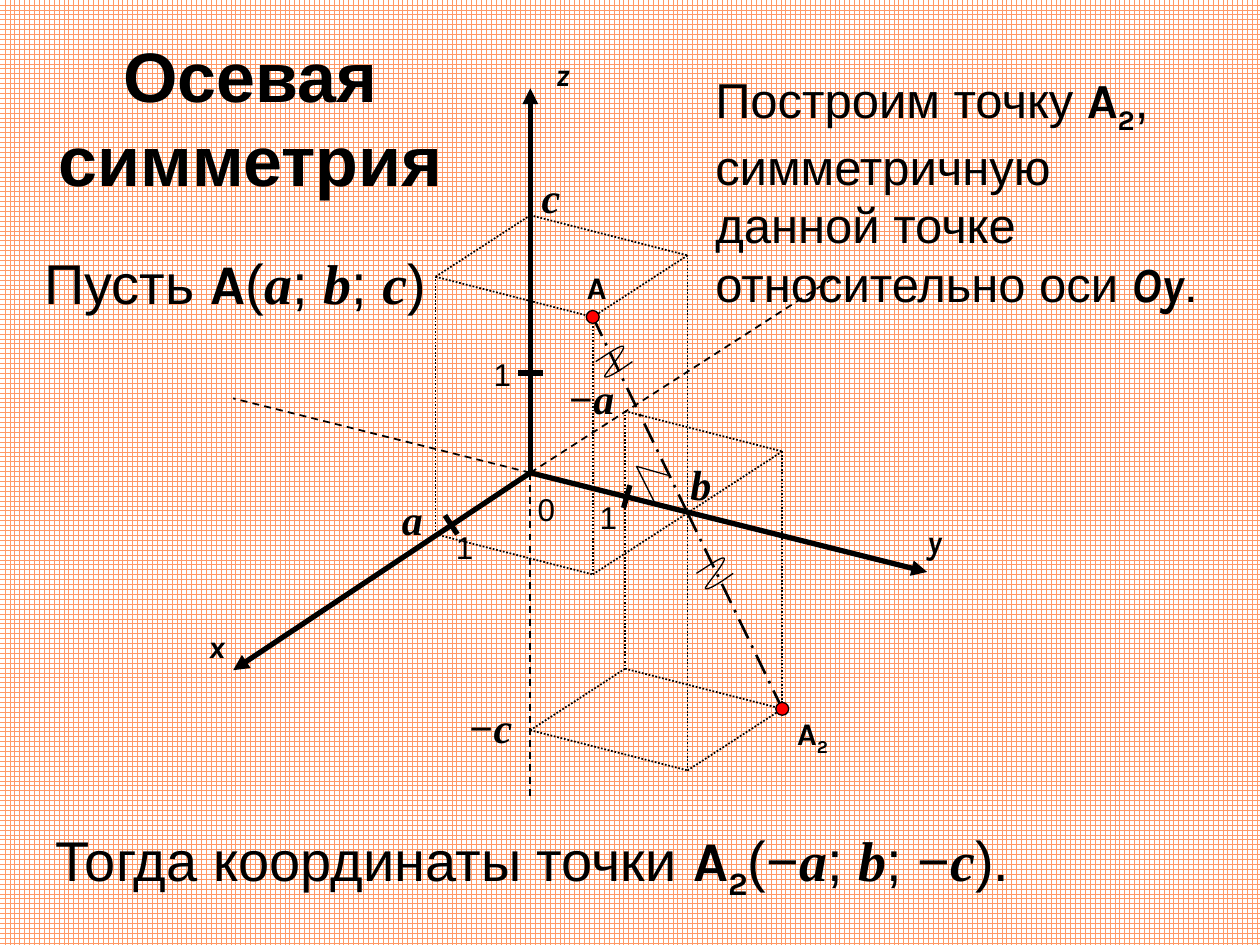
from collections import namedtuple
from itertools import combinations

from lxml.etree import SubElement
from pptx import Presentation
from pptx.dml.color import RGBColor
from pptx.enum.dml import MSO_LINE, MSO_PATTERN
from pptx.enum.shapes import MSO_CONNECTOR, MSO_SHAPE
from pptx.enum.text import PP_ALIGN
from pptx.oxml.ns import qn
from pptx.util import Cm, Pt

BLACK = RGBColor(0x00, 0x00, 0x00)
WHITE = RGBColor(0xFF, 0xFF, 0xFF)
RED = RGBColor(0xFF, 0x00, 0x00)
GRID_ORANGE = RGBColor(0xFF, 0x99, 0x66)

Style = namedtuple("Style", "font bold italic baseline")
PLAIN = Style("Arial", False, False, 0)
TITLE = Style("Arial", True, False, 0)
POINT = Style("Karla", True, False, 0)
INDEX = Style("Karla", True, False, -25000)
AXIS = Style("Karla", True, True, 0)
COORDINATE = Style("Times New Roman", True, True, 0)

# Projection of the space axes, in centimetres
ORIGIN = (10.69, 9.53)
UNIT_A = (-1.91, 1.24)
UNIT_B = (3.17, 0.81)
UNIT_C = (0, -5.19)


def project(a, b, c):
    return tuple(o + a * ua + b * ub + c * uc
                 for o, ua, ub, uc in zip(ORIGIN, UNIT_A, UNIT_B, UNIT_C))


def add_line(slide, start, end, width, dash=None, arrow=False):
    line = slide.shapes.add_connector(
        MSO_CONNECTOR.STRAIGHT, *(Cm(value) for value in (*start, *end)))
    line.line.color.rgb = BLACK
    line.line.width = Pt(width)
    if dash is not None:
        line.line.dash_style = dash
    if arrow:
        SubElement(line.line._get_or_add_ln(), qn("a:tailEnd"), type="triangle")
    SubElement(line._element.spPr, qn("a:effectLst"))


def set_font(font, style, size):
    font.name = style.font
    font.size = Pt(size)
    font.bold = style.bold
    font.italic = style.italic
    font.color.rgb = BLACK


def add_text(slide, box, size, *pieces, align=PP_ALIGN.LEFT):
    """Each piece is a (text, style) pair."""
    text_box = slide.shapes.add_textbox(*(Cm(value) for value in box))
    text_box.text_frame.word_wrap = True
    paragraph = text_box.text_frame.paragraphs[0]
    paragraph.alignment = align
    for text, style in pieces:
        run = paragraph.add_run()
        run.text = text
        if len(pieces) == 1:
            set_font(paragraph.font, style, size)
            continue
        set_font(run.font, style, size)
        if style.baseline:
            run._r.get_or_add_rPr().set("baseline", str(style.baseline))


def add_point(slide, centre):
    diameter = 0.26
    left, top = (value - diameter / 2 for value in centre)
    shape = slide.shapes.add_shape(
        MSO_SHAPE.OVAL, Cm(left), Cm(top), Cm(diameter), Cm(diameter))
    shape.shadow.inherit = False
    shape.fill.solid()
    shape.fill.fore_color.rgb = RED
    shape.line.color.rgb = BLACK
    shape.line.width = Pt(0.75)


def add_box_edges(slide, signs):
    """Dotted edges of the coordinate box, without those on the axes."""
    corners = [(a, b, c) for a in (0, signs[0])
               for b in (0, signs[1]) for c in (0, signs[2])]
    for first, second in combinations(corners, 2):
        is_edge = sum(p != q for p, q in zip(first, second)) == 1
        if is_edge and any(first):
            add_line(slide, project(*first), project(*second), 1,
                     MSO_LINE.ROUND_DOT)


def bezier(controls, steps=12):
    for step in range(1, steps + 1):
        t = step / steps
        weights = ((1 - t) ** 3, 3 * t * (1 - t) ** 2, 3 * t * t * (1 - t), t ** 3)
        yield tuple(sum(weight * control[axis]
                        for weight, control in zip(weights, controls))
                    for axis in (0, 1))


def add_equal_mark(slide, offset):
    controls = [(x + offset[0], y + offset[1]) for x, y in (
        (12.75, 7.29), (12.5, 7.47), (12.22, 7.65), (12.19, 7.59),
        (12.17, 7.57), (12.62, 7.04), (12.57, 6.99),
        (12.55, 6.93), (12.29, 7.11), (12.01, 7.29))]
    points = [point for start in (0, 3, 6)
              for point in bezier(controls[start:start + 4])]
    builder = slide.shapes.build_freeform(*(Cm(value) for value in controls[0]))
    builder.add_line_segments([(Cm(x), Cm(y)) for x, y in points], close=False)
    mark = builder.convert_to_shape()
    mark.shadow.inherit = False
    mark.fill.background()
    mark.line.color.rgb = BLACK
    mark.line.width = Pt(0.75)


def main():
    presentation = Presentation()
    presentation.slide_width = Cm(25.4)
    presentation.slide_height = Cm(19.05)
    slide = presentation.slides.add_slide(presentation.slide_layouts[6])

    # Squared paper
    background = slide.background.fill
    background.patterned()
    background.pattern = MSO_PATTERN.LARGE_GRID
    background.fore_color.rgb = GRID_ORANGE
    background.back_color.rgb = WHITE

    # Axes: positive and negative halves
    for positive, negative in (((4.7, 13.51), (16.79, 5.61)),
                               ((18.69, 11.53), (4.7, 8.03)),
                               ((10.69, 1.78), (10.69, 16.08))):
        add_line(slide, ORIGIN, negative, 1, MSO_LINE.DASH)
        add_line(slide, ORIGIN, positive, 3, arrow=True)

    # Unit ticks
    for start, end in (((10.44, 7.52), (10.95, 7.52)),
                       ((12.57, 10.24), (12.7, 9.78)),
                       ((8.97, 10.39), (9.22, 10.77))):
        add_line(slide, start, end, 3)

    # Coordinate boxes and the segment joining the symmetric points
    point_a, point_a2 = project(1, 1, 1), project(-1, 1, -1)
    foot = project(0, 1, 0)
    for signs in ((1, 1, 1), (-1, 1, -1)):
        add_box_edges(slide, signs)
    for start, end in ((point_a, foot), (foot, point_a2)):
        add_line(slide, start, end, 1.5, MSO_LINE.LONG_DASH_DOT)

    # Equal halves and right angle
    for offset in ((0, 0), (2.03, 4.27)):
        add_equal_mark(slide, offset)
    for end in ((13.21, 10.16), (13.46, 9.58)):
        add_line(slide, (12.83, 9.4), end, 0.75)
    for point in (point_a, point_a2):
        add_point(slide, point)

    # Labels
    for text, style, size, left, top, width in (
            ("x", AXIS, 18, 3.96, 12.52, 1.12),
            ("y", AXIS, 18, 18.44, 10.39, 1.12),
            ("z", AXIS, 18, 10.95, 0.99, 1.12),
            ("0", PLAIN, 18, 10.59, 9.75, 0.89),
            ("1", PLAIN, 18, 11.84, 9.91, 1.12),
            ("1", PLAIN, 18, 9.7, 7.04, 1.12),
            ("1", PLAIN, 18, 8.94, 10.52, 1.12),
            ("A", POINT, 18, 11.58, 5.28, 0.89),
            ("a", COORDINATE, 24, 7.85, 9.83, 0.99),
            ("b", COORDINATE, 24, 13.67, 9.12, 0.99),
            ("c", COORDINATE, 24, 10.67, 3.33, 0.99),
            ("−c", COORDINATE, 24, 9.19, 14.02, 1.63),
            ("−a", COORDINATE, 24, 11.2, 7.39, 1.5)):
        add_text(slide, (left, top, width, size / 18), size, (text, style))
    symmetric_name = (("A", POINT), ("2", INDEX))
    add_text(slide, (15.82, 14.27, 1.32, 1), 18, *symmetric_name)

    # Title and statements
    add_text(slide, (0.58, 0.53, 8.94, 3.68), 40, ("Осевая симметрия", TITLE),
             align=PP_ALIGN.CENTER)
    add_text(slide, (0.64, 4.88, 8.89, 1.63), 32,
             ("Пусть ", PLAIN), ("A", POINT), ("(", PLAIN), ("a", COORDINATE),
             ("; ", PLAIN), ("b", COORDINATE), ("; ", PLAIN),
             ("c", COORDINATE), (")", PLAIN))
    add_text(slide, (14.17, 1.27, 10.62, 5.05), 28,
             ("Построим точку ", PLAIN), *symmetric_name,
             (", симметричную данной точке относительно оси ", PLAIN),
             ("Oy", AXIS), (".", PLAIN))
    add_text(slide, (0.86, 16.51, 24.1, 1.63), 32,
             ("Тогда координаты точки ", PLAIN), *symmetric_name,
             ("(−", PLAIN), ("a", COORDINATE), ("; ", PLAIN),
             ("b", COORDINATE), ("; −", PLAIN), ("c", COORDINATE),
             (").", PLAIN))

    presentation.save("out.pptx")


if __name__ == "__main__":
    main()
